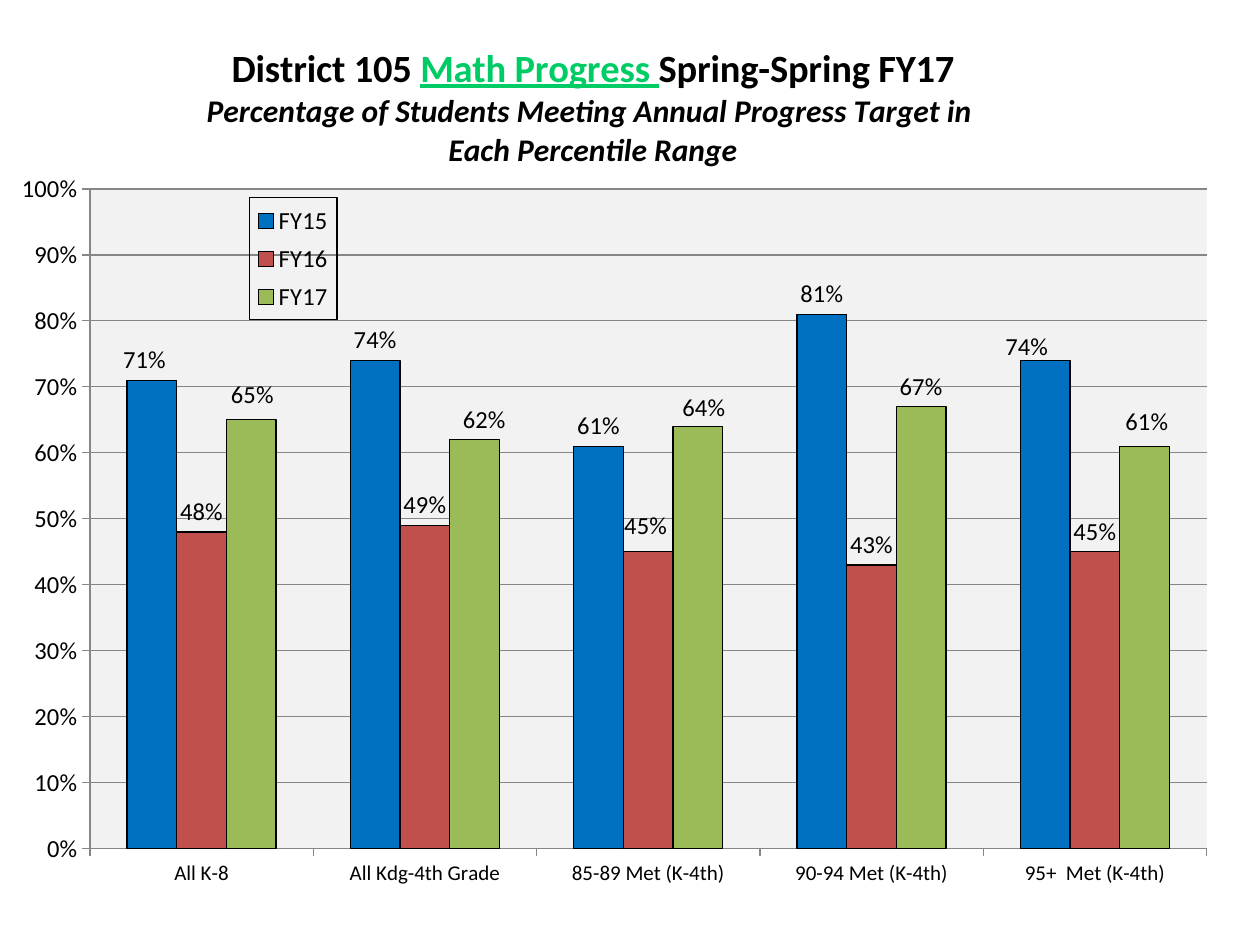
"""Build the District 105 math progress slide with its clustered column chart."""
from pptx import Presentation
from pptx.chart.data import CategoryChartData
from pptx.dml.color import RGBColor
from pptx.enum.chart import XL_CHART_TYPE as ChartType
from pptx.enum.chart import XL_LABEL_POSITION as LabelPos
from pptx.enum.chart import XL_LEGEND_POSITION as LegendPos
from pptx.enum.chart import XL_TICK_MARK as Tick
from pptx.oxml import parse_xml
from pptx.oxml.ns import nsdecls, qn
from pptx.util import Inches, Pt

THEME = {
    "font": "Calibri", "ink": "000000", "accent": "00CC66", "grid": "868686", "plot": "F2F2F2",
    "title": 22, "subtitle": 18, "label": 14, "category": 12, "outline": 0.75,
}
HEADLINE = [
    [("District 105 ", "ink"), ("Math Progress ", "accent"), ("Spring-Spring FY17", "ink")],
    [("Percentage of Students Meeting Annual Progress Target in ", "ink")],
    [("Each Percentile Range", "ink")],
]
RANGES = ["All K-8", "All Kdg-4th Grade", "85-89 Met (K-4th)", "90-94 Met (K-4th)", "95+  Met (K-4th)"]
YEARS = [
    {"name": "FY15", "color": "0070C0", "rates": (0.71, 0.74, 0.61, 0.81, 0.74),
     "nudges": {0: (-0.006, 0), 4: (-0.015, 0.008)}},
    {"name": "FY16", "color": "C0504D", "rates": (0.48, 0.49, 0.45, 0.43, 0.45),
     "nudges": {2: (-0.002, -0.007)}},
    {"name": "FY17", "color": "9BBB59", "rates": (0.65, 0.62, 0.64, 0.67, 0.61),
     "nudges": {0: (0.001, -0.005), 1: (0.008, 0), 2: (0.005, 0.002), 4: (0.002, -0.005)}},
]


def rgb(key):
    return RGBColor.from_string(THEME.get(key, key))


def place(part, index, inner=False, edge=True, **fractions):
    for old in part.findall(qn("c:layout")):
        part.remove(old)
    target = '<c:layoutTarget val="inner"/>' if inner else ""
    modes = '<c:xMode val="edge"/><c:yMode val="edge"/>' if edge else ""
    sizes = "".join(f'<c:{name} val="{value}"/>' for name, value in fractions.items())
    part.insert(index, parse_xml(
        f'<c:layout {nsdecls("c")}><c:manualLayout>{target}{modes}{sizes}</c:manualLayout></c:layout>'))


def shape_style(content):
    return parse_xml(f'<c:spPr {nsdecls("c", "a")}>{content}</c:spPr>')


def solid(key):
    return f'<a:solidFill><a:srgbClr val="{THEME[key]}"/></a:solidFill>'


def add_headline(chart):
    frame = chart.chart_title.text_frame
    for row, pieces in enumerate(HEADLINE):
        line = frame.add_paragraph() if row else frame.paragraphs[0]
        for words, color in pieces:
            run = line.add_run()
            run.text = words
            font = run.font
            font.name, font.bold, font.italic = THEME["font"], True, row > 0
            font.size = Pt(THEME["subtitle" if row else "title"])
            font.underline = color == "accent"
            font.color.rgb = rgb(color)
    place(chart.chart_title._element, 1, x=0.157, y=0.02)


def style_axes(chart):
    rates, ranges = chart.value_axis, chart.category_axis
    rates.minimum_scale, rates.maximum_scale, rates.major_unit = 0, 1, 0.1
    rates.tick_labels.number_format = "0%"
    rates.tick_labels.number_format_is_linked = False
    rates.major_gridlines.format.line.color.rgb = rgb("grid")
    for axis, size in ((rates, "label"), (ranges, "category")):
        axis.major_tick_mark, axis.minor_tick_mark = Tick.OUTSIDE, Tick.NONE
        axis.tick_labels.font.size = Pt(THEME[size])
        axis.format.line.color.rgb = rgb("grid")


def style_year(series, year):
    series.format.fill.solid()
    series.format.fill.fore_color.rgb = rgb(year["color"])
    series.format.line.color.rgb = rgb("ink")
    series.format.line.width = Pt(THEME["outline"])
    labels = series.data_labels
    labels.show_value, labels.position = True, LabelPos.OUTSIDE_END
    labels.number_format, labels.number_format_is_linked = "0%", False
    labels.font.size = Pt(THEME["label"])
    for index in year["nudges"]:
        label = series.points[index].data_label
        label.position = LabelPos.OUTSIDE_END
        label.font.size = Pt(THEME["label"])
    for label in series._element.iter(qn("c:dLbl")):
        x, y = year["nudges"][int(label.find(qn("c:idx")).get("val"))]
        place(label, 1, edge=False, x=x, y=y)


def add_legend(chart):
    chart.has_legend = True
    legend = chart.legend
    legend.position, legend.include_in_layout = LegendPos.RIGHT, True
    legend.font.size = Pt(THEME["label"])
    place(legend._element, 1, x=0.195, y=0.2, w=0.071, h=0.138)
    legend._element.find(qn("c:overlay")).addnext(
        shape_style(f'<a:noFill/><a:ln w="{Pt(THEME["outline"])}">{solid("ink")}</a:ln>'))


def main():
    deck = Presentation()
    deck.slide_width, deck.slide_height = Inches(10), Inches(7.5)
    slide = deck.slides.add_slide(deck.slide_layouts[6])
    progress = CategoryChartData(number_format="0%")
    progress.categories = RANGES
    for year in YEARS:
        progress.add_series(year["name"], year["rates"])
    chart = slide.shapes.add_chart(
        ChartType.COLUMN_CLUSTERED, Inches(0.08), Inches(0.17), Inches(9.75), Inches(7), progress).chart
    chart.font.name, chart.font.size = THEME["font"], Pt(THEME["subtitle"])
    chart.font.color.rgb = rgb("ink")
    add_headline(chart)
    style_axes(chart)
    columns = chart.plots[0]
    columns.gap_width, columns.overlap, columns.vary_by_categories = 150, 0, False
    for series, year in zip(columns.series, YEARS):
        style_year(series, year)
    add_legend(chart)
    plot_area = chart._chartSpace.find(".//" + qn("c:plotArea"))
    place(plot_area, 0, inner=True, x=0.065, y=0.19, w=0.909, h=0.748)
    plot_area.append(shape_style(solid("plot")))
    deck.save("out.pptx")


if __name__ == "__main__":
    main()
